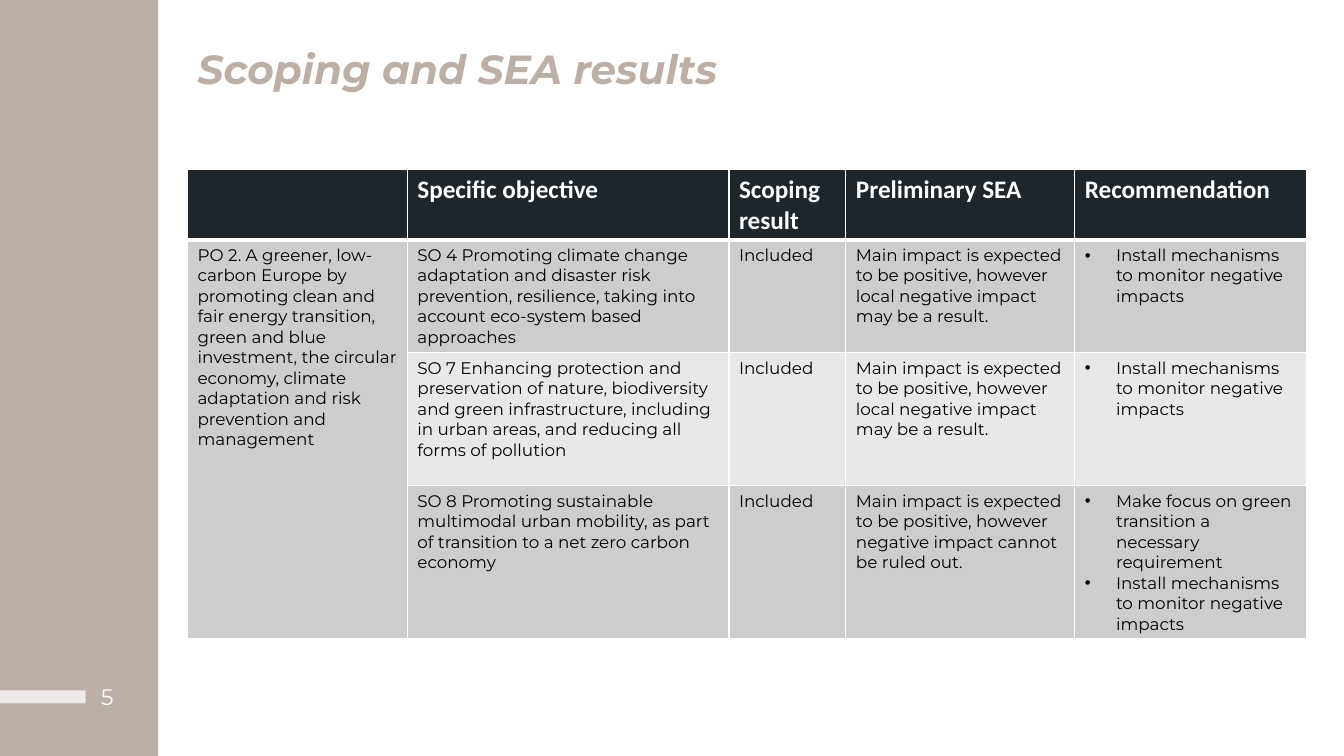
import pptx
import pptx.util
import pptx.dml.color
import pptx.enum.shapes
import pptx.enum.text
import pptx.oxml.ns
from lxml import etree

Inches, Pt = pptx.util.Inches, pptx.util.Pt
qn = pptx.oxml.ns.qn

BEIGE, WHITE, DARK = "BCAFA7", "FFFFFF", "1E252B"
BANDS = ("CDCDCD", "E8E8E8")
FORMATS = {
    "title": dict(size=Pt(29), name="Montserrat", bold=True, italic=True, color=BEIGE),
    "number": dict(size=Pt(16), name="Montserrat", color=WHITE),
    "header": dict(size=Pt(18), name="Calibri", bold=True, color=WHITE),
    "body": dict(size=Pt(12), name="Montserrat", bold=False, color="000000"),
}


def rgb(value):
    return pptx.dml.color.RGBColor.from_string(value)


class SlideBuilder:
    def __init__(self, slide):
        self.slide = slide

    def style(self, paragraph, format_name):
        for key, value in FORMATS[format_name].items():
            if key == "color":
                paragraph.font.color.rgb = rgb(value)
            else:
                setattr(paragraph.font, key, value)

    def title(self, wording, left, top, width, height):
        heading = self.slide.shapes.title
        heading.left, heading.top = Inches(left), Inches(top)
        heading.width, heading.height = Inches(width), Inches(height)
        frame = heading.text_frame
        frame.text = wording
        frame.word_wrap = True
        frame.auto_size = pptx.enum.text.MSO_AUTO_SIZE.NONE
        frame.vertical_anchor = pptx.enum.text.MSO_ANCHOR.TOP
        line = frame.paragraphs[0]
        line.alignment = pptx.enum.text.PP_ALIGN.LEFT
        line.line_spacing = 0.9
        self.style(line, "title")

    def block(self, color, left, top, width, height, opacity=100):
        bar = self.slide.shapes.add_shape(
            pptx.enum.shapes.MSO_SHAPE.RECTANGLE,
            Inches(left), Inches(top), Inches(width), Inches(height))
        bar.shadow.inherit = False
        bar.fill.solid()
        bar.fill.fore_color.rgb = rgb(color)
        bar.line.fill.background()
        if opacity < 100:
            fill_color = bar.fill._xPr.find(qn("a:solidFill"))[0]
            etree.SubElement(fill_color, qn("a:alpha"), val=str(opacity * 1000))

    def label(self, wording, left, top, width, height, inset):
        frame = self.slide.shapes.add_textbox(
            Inches(left), Inches(top), Inches(width), Inches(height)).text_frame
        frame.word_wrap = True
        for side in ("left", "top", "right", "bottom"):
            setattr(frame, f"margin_{side}", Inches(inset))
        frame.text = wording
        self.style(frame.paragraphs[0], "number")

    def table(self, rows, left, top, widths, heights):
        grid = self.slide.shapes.add_table(
            len(rows), len(widths), Inches(left), Inches(top),
            Inches(sum(widths)), Inches(sum(heights))).table
        for column, width in zip(grid.columns, widths):
            column.width = Inches(width)
        for row, height in zip(grid.rows, heights):
            row.height = Inches(height)
        for r, entries in enumerate(rows):
            for c, entry in enumerate(entries):
                self.cell(grid.cell(r, c), entry, r)
        return grid

    def cell(self, cell, entry, row):
        # A list becomes bullets, a string becomes one plain paragraph
        bulleted = isinstance(entry, list)
        cell.text = "\n".join(entry) if bulleted else entry
        for paragraph in cell.text_frame.paragraphs:
            if bulleted:
                self.bullet(paragraph)
            self.style(paragraph, "body" if row else "header")
        self.borders(cell, bottom=1 if row else 3)
        cell.fill.solid()
        cell.fill.fore_color.rgb = rgb(BANDS[(row - 1) % 2] if row else DARK)

    def bullet(self, paragraph):
        properties = paragraph._p.get_or_add_pPr()
        properties.set("marL", str(Inches(0.31)))
        properties.set("indent", str(-Inches(0.31)))
        etree.SubElement(properties, qn("a:buFont"), typeface="Arial")
        etree.SubElement(properties, qn("a:buChar"), char="•")

    def borders(self, cell, bottom):
        properties = cell._tc.get_or_add_tcPr()
        for side, width in (("L", 1), ("R", 1), ("T", 1), ("B", bottom)):
            edge = etree.SubElement(properties, qn(f"a:ln{side}"), w=str(Pt(width)))
            fill = etree.SubElement(edge, qn("a:solidFill"))
            etree.SubElement(fill, qn("a:srgbClr"), val=WHITE)


POSITIVE = "Main impact is expected to be positive, however "
LOCAL_IMPACT = POSITIVE + "local negative impact may be a result."
MONITORING = "Install mechanisms to monitor negative impacts"
RESULTS = [
    ["", "Specific objective", "Scoping result", "Preliminary SEA", "Recommendation"],
    ["PO 2. A greener, low-carbon Europe by promoting clean and fair energy "
     "transition, green and blue investment, the circular economy, climate "
     "adaptation and risk prevention and management\u00a0",
     "SO 4 Promoting climate change adaptation and disaster risk prevention, "
     "resilience, taking into account eco-system based approaches",
     "Included", LOCAL_IMPACT, [MONITORING]],
    ["", "SO 7 Enhancing protection and preservation of nature, biodiversity and "
     "green infrastructure, including in urban areas, and reducing all forms of "
     "pollution",
     "Included", LOCAL_IMPACT, [MONITORING]],
    ["", "SO 8 Promoting sustainable multimodal urban mobility, as part of "
     "transition to a net zero carbon economy",
     "Included", POSITIVE + "negative impact cannot be ruled out.",
     ["Make focus on green transition a necessary requirement", MONITORING]],
]


def main():
    deck = pptx.Presentation()
    deck.slide_width, deck.slide_height = Inches(13.33), Inches(7.5)
    builder = SlideBuilder(deck.slides.add_slide(deck.slide_layouts[5]))

    # Side band with slide number
    builder.block(BEIGE, 0, 0, 1.57, 7.5)
    builder.label("5", 0.95, 6.73, 0.34, 0.36, inset=0.05)
    builder.block(WHITE, 0, 6.85, 0.85, 0.13, opacity=75)

    # Title
    builder.title("Scoping and SEA results", 1.86, 0.44, 10.67, 0.71)

    # Results table, one policy objective across three specific objectives
    results = builder.table(RESULTS, 1.86, 1.68,
                            widths=[2.18, 3.19, 1.16, 2.27, 2.3],
                            heights=[0.7, 1.12, 1.32, 1.52])
    results.cell(1, 0).merge(results.cell(3, 0))

    deck.save("out.pptx")


if __name__ == "__main__":
    main()
